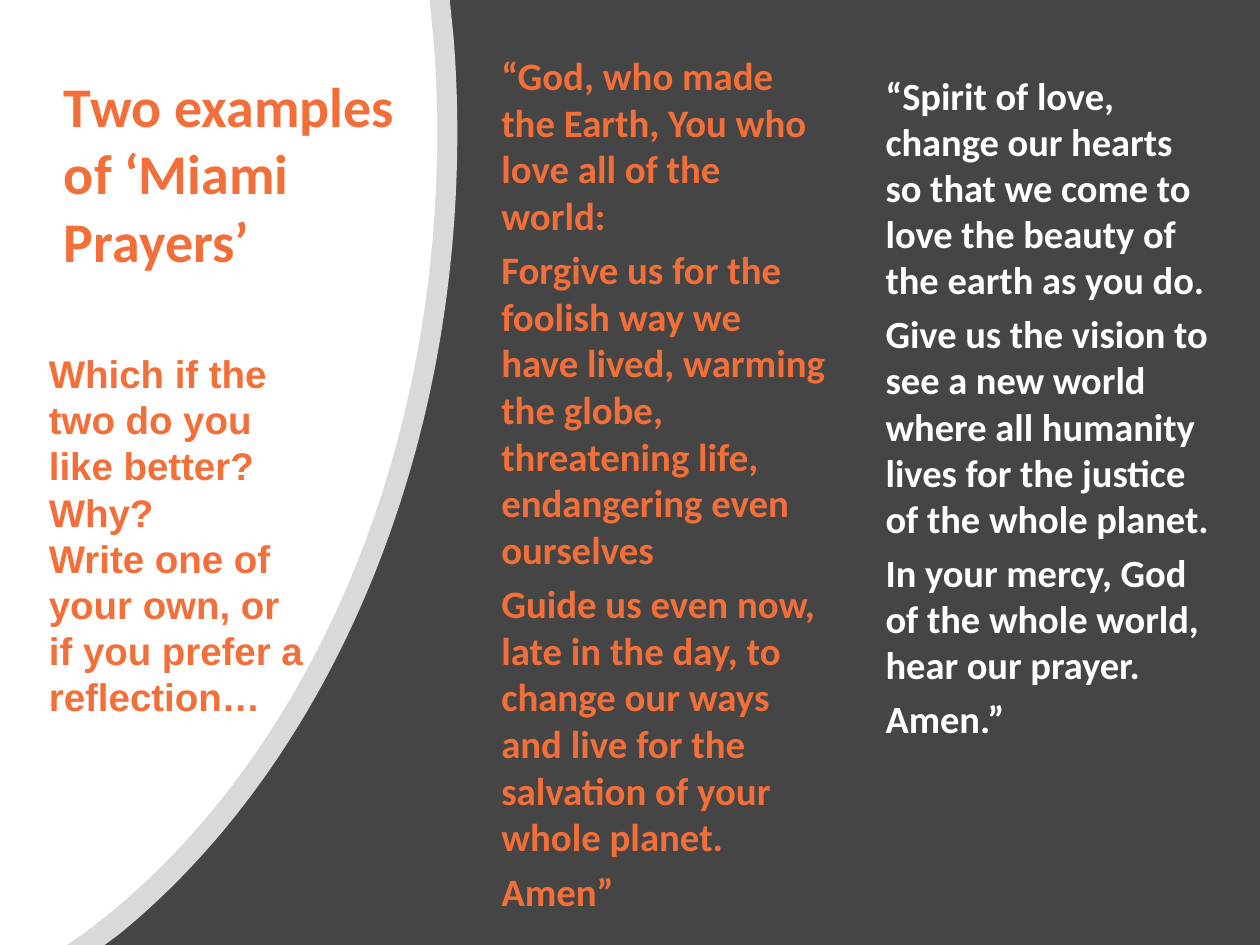
from dataclasses import dataclass

import pptx
import pptx.dml.color
import pptx.oxml
import pptx.oxml.ns
import pptx.util
from pptx.util import Inches

Point = tuple[float, float]


@dataclass(frozen=True)
class Theme:
    background: str = "454545"
    white: str = "FFFFFF"
    accent: str = "F36F39"
    heading_font: str = "Calibri"
    question_font: str = "Arial"
    title_size: float = 32
    first_prayer_size: float = 22.2
    text_size: float = 22
    prayer_gap: float = 4.4


@dataclass(frozen=True)
class Panel:
    """A white area whose right edge is a line followed by Bezier curves."""
    top_right: Point
    curve_start: Point
    curves: tuple[tuple[Point, Point, Point], ...]
    bottom_x: float
    opacity: int = 100


@dataclass(frozen=True)
class TextBlock:
    left: float
    top: float
    width: float
    height: float
    paragraphs: tuple[str, ...]
    size: float
    color: str
    font: str
    gap: float = 0


THEME = Theme()
SLIDE_WIDTH, SLIDE_HEIGHT = 10, 7.5

PANELS = (
    Panel((3.57, 0), (3.6, 0.29),
          (((3.62, 0.54), (3.63, 0.8), (3.63, 1.05)),
           ((3.63, 3.75), (2.55, 6.11), (0.94, 7.42))), 0.83, opacity=80),
    Panel((3.41, 0), (3.44, 0.31),
          (((3.46, 0.55), (3.47, 0.8), (3.47, 1.05)),
           ((3.47, 3.81), (2.32, 6.21), (0.62, 7.44))), 0.53),
)

TEXT_BLOCKS = (
    TextBlock(0.41, 0.52, 3.06, 1.81, ("Two examples of ‘Miami Prayers’",),
              THEME.title_size, THEME.accent, THEME.heading_font),
    TextBlock(3.88, 0.36, 2.78, 5.95, (
        "“God, who made the Earth, You who love all of the world:",
        "Forgive us for the foolish way we have lived, warming the globe, "
        "threatening life, endangering even ourselves",
        "Guide us even now, late in the day, to change our ways and live for "
        "the salvation of your whole planet.",
        "Amen”",
    ), THEME.first_prayer_size, THEME.accent, THEME.heading_font,
        THEME.prayer_gap),
    TextBlock(6.93, 0.52, 2.78, 5.8, (
        "“Spirit of love, change our hearts so that we come to love the "
        "beauty of the earth as you do.",
        "Give us the vision to see a new world where all humanity lives for "
        "the justice of the whole planet.",
        "In your mercy, God of the whole world, hear our prayer.",
        "Amen.”",
    ), THEME.text_size, THEME.white, THEME.heading_font, THEME.prayer_gap),
    TextBlock(0.29, 2.73, 2.27, 3.06, (
        "Which if the two do you like better? Why?",
        "Write one of your own, or if you prefer a reflection…",
    ), THEME.text_size, THEME.accent, THEME.question_font),
)


def rgb(color: str) -> pptx.dml.color.RGBColor:
    return pptx.dml.color.RGBColor.from_string(color)


def bend_edge(area: pptx.shapes.autoshape.Shape, first: int, count: int) -> None:
    """Turn each three line segments, from the first given, into one curve."""
    segments = area.element.findall(".//" + pptx.oxml.ns.qn("a:lnTo"))
    for start in range(first, first + 3 * count, 3):
        curve = pptx.oxml.parse_xml(
            f'<a:cubicBezTo {pptx.oxml.ns.nsdecls("a")}/>')
        segments[start].addprevious(curve)
        for segment in segments[start:start + 3]:
            curve.append(segment[0])
            segment.getparent().remove(segment)


def set_opacity(area: pptx.shapes.autoshape.Shape, percent: int) -> None:
    fill_color = area.element.find(".//" + pptx.oxml.ns.qn("a:srgbClr"))
    fill_color.append(pptx.oxml.parse_xml(
        f'<a:alpha {pptx.oxml.ns.nsdecls("a")} val="{percent * 1000}"/>'))


def draw_panel(slide: pptx.slide.Slide, panel: Panel) -> None:
    edge = [panel.top_right, panel.curve_start]
    for curve in panel.curves:
        edge += curve
    edge += [(panel.bottom_x, SLIDE_HEIGHT), (0, SLIDE_HEIGHT)]

    builder = slide.shapes.build_freeform(0, 0, scale=1.0)
    builder.add_line_segments([(Inches(x), Inches(y)) for x, y in edge], close=True)
    area = builder.convert_to_shape()
    bend_edge(area, first=2, count=len(panel.curves))
    area.shadow.inherit = False
    area.line.fill.background()
    area.fill.solid()
    area.fill.fore_color.rgb = rgb(THEME.white)
    if panel.opacity < 100:
        set_opacity(area, panel.opacity)


def draw_text(slide: pptx.slide.Slide, block: TextBlock) -> None:
    box = slide.shapes.add_textbox(Inches(block.left), Inches(block.top),
                                   Inches(block.width), Inches(block.height))
    frame = box.text_frame
    frame.word_wrap = True
    frame.text = "\n".join(block.paragraphs)
    for index, paragraph in enumerate(frame.paragraphs):
        paragraph.space_before = pptx.util.Pt(block.gap if index else 0)
        for run in paragraph.runs:
            run.font.name = block.font
            run.font.size = pptx.util.Pt(block.size)
            run.font.bold = True
            run.font.color.rgb = rgb(block.color)


def main() -> None:
    presentation = pptx.Presentation()
    presentation.slide_width = Inches(SLIDE_WIDTH)
    presentation.slide_height = Inches(SLIDE_HEIGHT)
    slide = presentation.slides.add_slide(presentation.slide_layouts[6])
    slide.background.fill.solid()
    slide.background.fill.fore_color.rgb = rgb(THEME.background)
    for panel in PANELS:
        draw_panel(slide, panel)
    for block in TEXT_BLOCKS:
        draw_text(slide, block)
    presentation.save("out.pptx")


if __name__ == "__main__":
    main()
